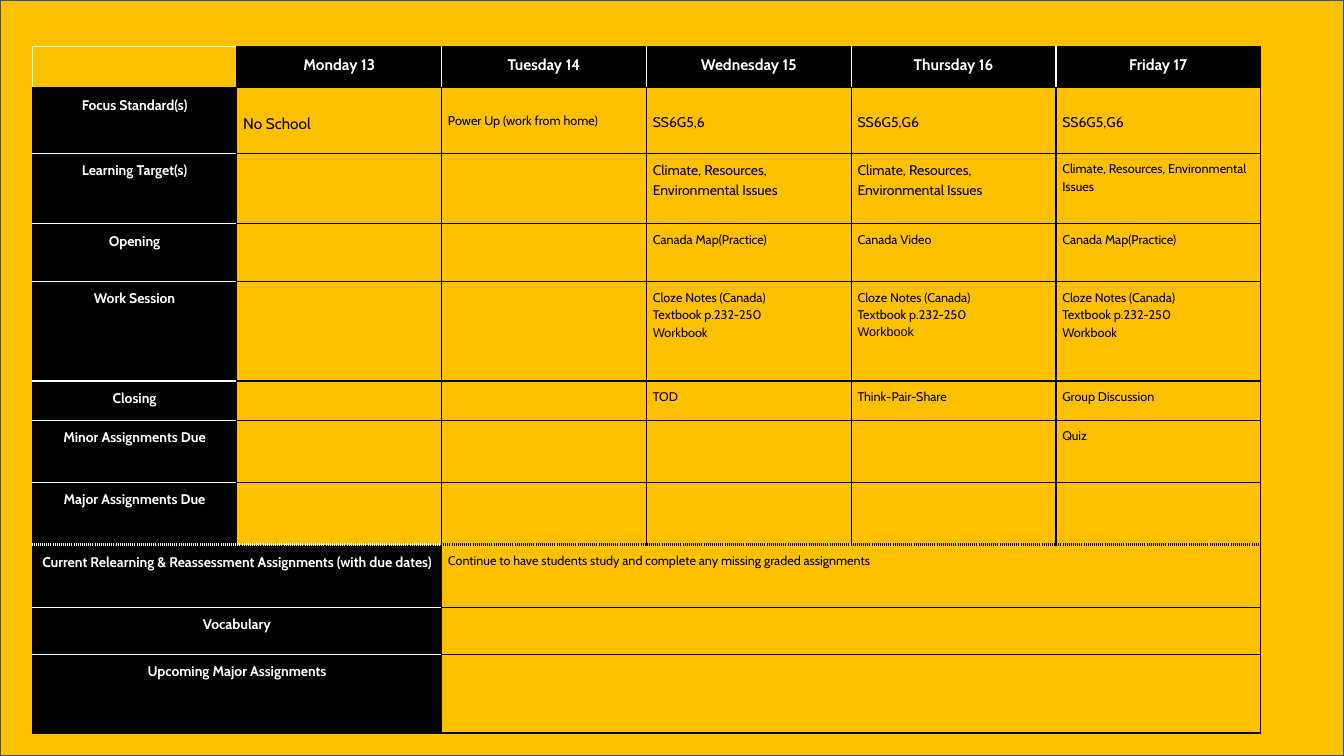
"""Build a weekly lesson plan slide: a table of standards, activities and assignments by day."""
from dataclasses import dataclass

from lxml.etree import SubElement
from pptx import Presentation
from pptx.dml.color import RGBColor
from pptx.enum.shapes import MSO_SHAPE
from pptx.enum.text import PP_ALIGN
from pptx.oxml.ns import qn
from pptx.slide import Slide
from pptx.table import Table, _Cell
from pptx.util import Cm, Pt

COLORS = {"gold": "FFC000", "black": "000000", "white": "FFFFFF", "outline": "325491"}
FONT = "Cabin"
COLUMN_COUNT = 6
COLUMN_WIDTH = 5.16
CELL_MARGIN = 0.16
STANDARD_DROP = 0.44
WIDE_LABEL_COLUMNS = 2


@dataclass(frozen=True)
class Line:
    text: str
    size: float = 9
    font: str = FONT


@dataclass(frozen=True)
class Entry:
    lines: tuple[Line, ...] = (Line(""),)
    drop: float = 0


@dataclass(frozen=True)
class PlanRow:
    label: str
    height: float
    entries: tuple[Entry, ...] = ()
    wide: bool = False
    dotted_top: bool = False
    dotted_bottom: bool = False


def entry(text: str, size: float = 9, drop: float = 0) -> Entry:
    return Entry(tuple(Line(part, size) for part in text.split("\n")), drop)


EMPTY = Entry()
DAYS = ("Monday 13", "Tuesday 14", "Wednesday 15", "Thursday 16", "Friday 17")
TARGET = "Climate, Resources, Environmental Issues"
NOTES = entry("Cloze Notes (Canada)\nTextbook p.232-250\nWorkbook")
THURSDAY_NOTES = Entry(NOTES.lines[:2] + (Line("Workbook", font="Arial"),))

ROWS = (
    PlanRow("", 1.04, tuple(entry(day, 11) for day in DAYS)),
    PlanRow("Focus Standard(s)", 1.65, (
        entry("No School", 11, STANDARD_DROP),
        entry("Power Up (work from home)", 9, STANDARD_DROP),
        entry("SS6G5,6", 10, STANDARD_DROP),
        entry("SS6G5,G6", 10, STANDARD_DROP),
        entry("SS6G5,G6", 10, STANDARD_DROP),
    )),
    PlanRow("Learning Target(s)", 1.78,
            (EMPTY, EMPTY, entry(TARGET, 10), entry(TARGET, 10), entry(TARGET))),
    PlanRow("Opening", 1.45, (EMPTY, EMPTY, entry("Canada Map(Practice)"),
                              entry("Canada Video"), entry("Canada Map(Practice)"))),
    PlanRow("Work Session", 2.51, (EMPTY, EMPTY, NOTES, THURSDAY_NOTES, NOTES)),
    PlanRow("Closing", 0.99, (EMPTY, EMPTY, entry("TOD"),
                              entry("Think-Pair-Share"), entry("Group Discussion"))),
    PlanRow("Minor Assignments Due", 1.57, (EMPTY,) * 4 + (entry("Quiz"),)),
    PlanRow("Major Assignments Due", 1.57, (EMPTY,) * 5, dotted_bottom=True),
    PlanRow("Current Relearning & Reassessment Assignments (with due dates)", 1.57,
            (entry("Continue to have students study and complete any missing graded assignments"),),
            wide=True, dotted_top=True),
    PlanRow("Vocabulary", 1.19, (EMPTY,), wide=True),
    PlanRow("Upcoming Major Assignments", 1.98, (EMPTY,), wide=True),
)


def color(name: str) -> RGBColor:
    return RGBColor.from_string(COLORS[name])


def add_border(cell: _Cell, side: str, color_name: str, dotted: bool = False) -> None:
    width = Pt(2.25 if dotted else 1)
    line = SubElement(cell._tc.get_or_add_tcPr(), qn(f"a:ln{side}"), w=str(width))
    SubElement(SubElement(line, qn("a:solidFill")), qn("a:srgbClr"), val=COLORS[color_name])
    SubElement(line, qn("a:prstDash"), val="sysDot" if dotted else "solid")


def draw_borders(cell: _Cell, row_index: int, column: int) -> None:
    row = ROWS[row_index]
    header, last = row_index == 0, row_index == len(ROWS) - 1
    label = column < (WIDE_LABEL_COLUMNS if row.wide else 1)
    white = {
        "L": header and column != 1,
        "R": header and 0 < column < COLUMN_COUNT - 1,
        "T": label and row_index != 1,
        "B": label and not header and not last,
    }
    dotted = {"T": row.dotted_top, "B": row.dotted_bottom}
    for side, is_white in white.items():
        add_border(cell, side, "white" if is_white else "black", dotted.get(side, False))


def write_cell(cell: _Cell, content: Entry, dark: bool) -> None:
    cell.margin_left = cell.margin_right = cell.margin_bottom = Cm(CELL_MARGIN)
    cell.margin_top = Cm(CELL_MARGIN + content.drop)
    if dark:
        cell.fill.solid()
        cell.fill.fore_color.rgb = color("black")
    else:
        cell.fill.background()
    cell.text = "\n".join(line.text for line in content.lines)
    for paragraph, line in zip(cell.text_frame.paragraphs, content.lines):
        paragraph.line_spacing = 1.15
        paragraph.alignment = PP_ALIGN.CENTER if dark else PP_ALIGN.LEFT
        paragraph.font.name = line.font
        paragraph.font.size = Pt(line.size)
        paragraph.font.bold = dark
        paragraph.font.color.rgb = color("white" if dark else "black")


def fill_row(table: Table, index: int, row: PlanRow) -> None:
    table.rows[index].height = Cm(row.height)
    for column in range(COLUMN_COUNT):
        draw_borders(table.cell(index, column), index, column)
    first_entry = WIDE_LABEL_COLUMNS if row.wide else 1
    if row.wide:
        table.cell(index, 0).merge(table.cell(index, first_entry - 1))
        table.cell(index, first_entry).merge(table.cell(index, COLUMN_COUNT - 1))
    write_cell(table.cell(index, 0), entry(row.label, 10), dark=index > 0)
    for column, content in enumerate(row.entries, first_entry):
        write_cell(table.cell(index, column), content, dark=index == 0)


def draw_background(page: Slide, width: int, height: int) -> None:
    box = page.shapes.add_shape(MSO_SHAPE.RECTANGLE, 0, 0, width, height)
    box.shadow.inherit = False
    box.fill.solid()
    box.fill.fore_color.rgb = color("gold")
    box.line.color.rgb = color("outline")
    box.line.width = Pt(1)


def draw_plan(page: Slide) -> None:
    frame = page.shapes.add_table(
        len(ROWS), COLUMN_COUNT, Cm(0.81), Cm(1.17),
        Cm(COLUMN_WIDTH * COLUMN_COUNT), Cm(sum(row.height for row in ROWS)))
    table = frame.table
    table.first_row = table.horz_banding = False
    for column in table.columns:
        column.width = Cm(COLUMN_WIDTH)
    for index, row in enumerate(ROWS):
        fill_row(table, index, row)


def main() -> None:
    deck = Presentation()
    deck.slide_width, deck.slide_height = Cm(33.87), Cm(19.05)
    page = deck.slides.add_slide(deck.slide_layouts[6])
    draw_background(page, deck.slide_width, deck.slide_height)
    draw_plan(page)
    deck.save("out.pptx")


if __name__ == "__main__":
    main()
